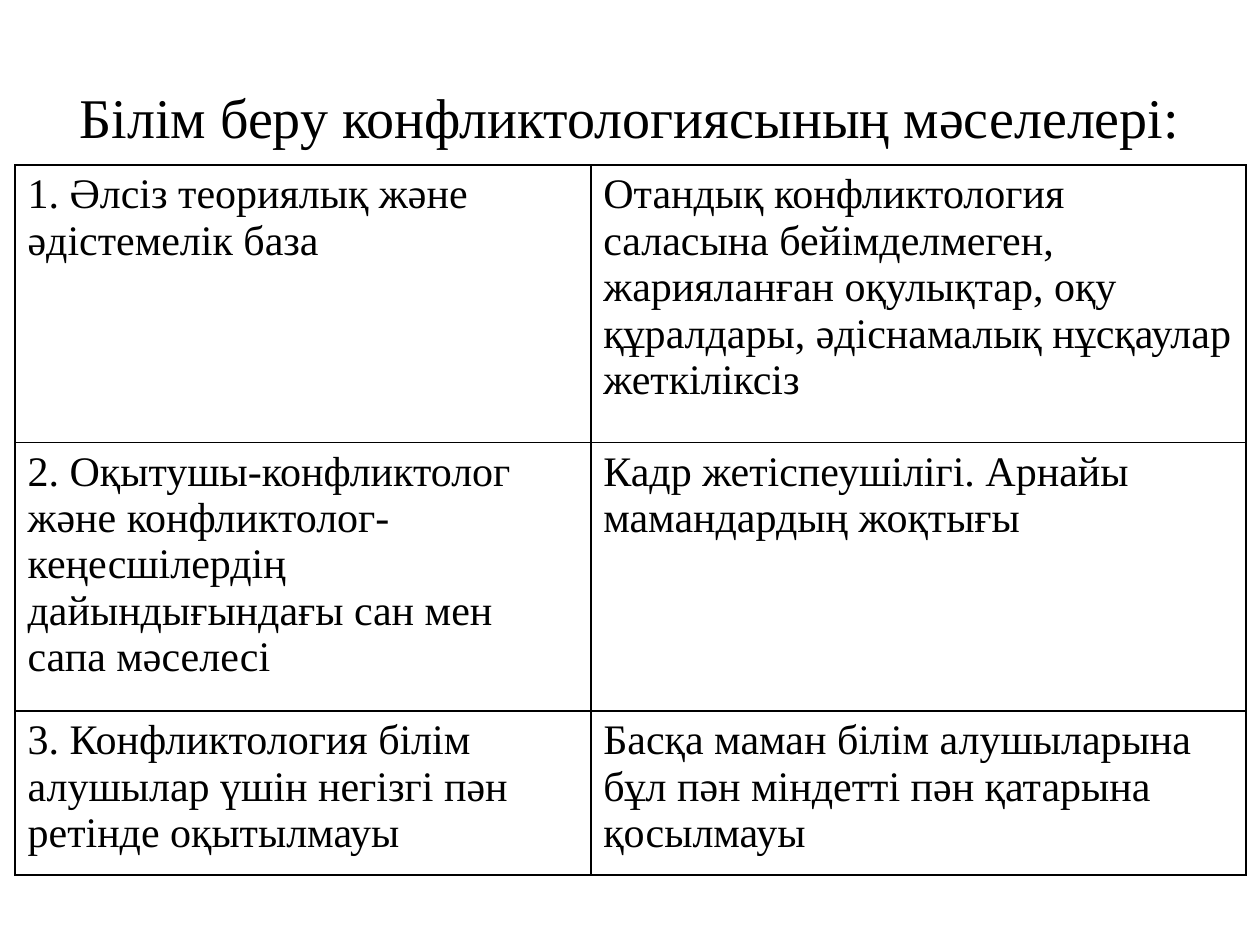
from lxml.etree import SubElement as Sub
from pptx import Presentation
from pptx.dml.color import RGBColor as RGB
from pptx.enum.text import MSO_ANCHOR as Anchor, PP_ALIGN as Align
from pptx.oxml.ns import qn
from pptx.util import Pt

FONT = "Times New Roman"
COLORS = {"ink": "000000", "paper": "FFFFFF"}
TITLE = "Білім беру конфликтологиясының мәселелері:"
COLS = [329, 374.5]
ROWS = [
    (158.5, "1. Әлсіз теориялық және әдістемелік база",
     "Отандық конфликтология саласына бейімделмеген, жарияланған оқулықтар, "
     "оқу құралдары, әдіснамалық нұсқаулар жеткіліксіз"),
    (153.5, "2. Оқытушы-конфликтолог және конфликтолог-кеңесшілердің "
     "дайындығындағы сан мен сапа мәселесі",
     "Кадр жетіспеушілігі. Арнайы мамандардың жоқтығы"),
    (83.5, "3. Конфликтология білім алушылар үшін негізгі пән ретінде оқытылмауы",
     "Басқа маман білім алушыларына бұл пән міндетті пән қатарына қосылмауы"),
]


def write(frame, text, size):
    par = frame.paragraphs[0]
    par.text = text
    par.font.name = FONT
    par.font.size = Pt(size)
    par.font.color.rgb = RGB.from_string(COLORS["ink"])
    return par


def add_title(slide):
    frame = slide.shapes.add_textbox(Pt(36), Pt(21.6), Pt(648), Pt(90)).text_frame
    frame.word_wrap = True
    frame.vertical_anchor = Anchor.MIDDLE
    write(frame, TITLE, 32).alignment = Align.CENTER


def add_border(cell):
    props = cell._tc.get_or_add_tcPr()
    for side in ("lnL", "lnR", "lnT", "lnB"):
        line = Sub(props, qn(f"a:{side}"), w=str(Pt(1)))
        fill = Sub(line, qn("a:solidFill"))
        Sub(fill, qn("a:srgbClr"), val=COLORS["ink"])


def add_grid(slide):
    high = sum(row[0] for row in ROWS)
    table = slide.shapes.add_table(
        len(ROWS), len(COLS), Pt(8.6), Pt(94.3), Pt(sum(COLS)), Pt(high)).table
    table.first_row = table.horz_banding = False
    for col, width in zip(table.columns, COLS):
        col.width = Pt(width)
    for row, (height, *texts) in zip(table.rows, ROWS):
        row.height = Pt(height)
        for cell, text in zip(row.cells, texts):
            add_border(cell)
            cell.fill.solid()
            cell.fill.fore_color.rgb = RGB.from_string(COLORS["paper"])
            write(cell.text_frame, text, 24)


def main():
    deck = Presentation()
    deck.slide_width, deck.slide_height = Pt(720), Pt(540)
    slide = deck.slides.add_slide(deck.slide_layouts[6])
    add_title(slide)
    add_grid(slide)
    deck.save("out.pptx")


if __name__ == "__main__":
    main()
